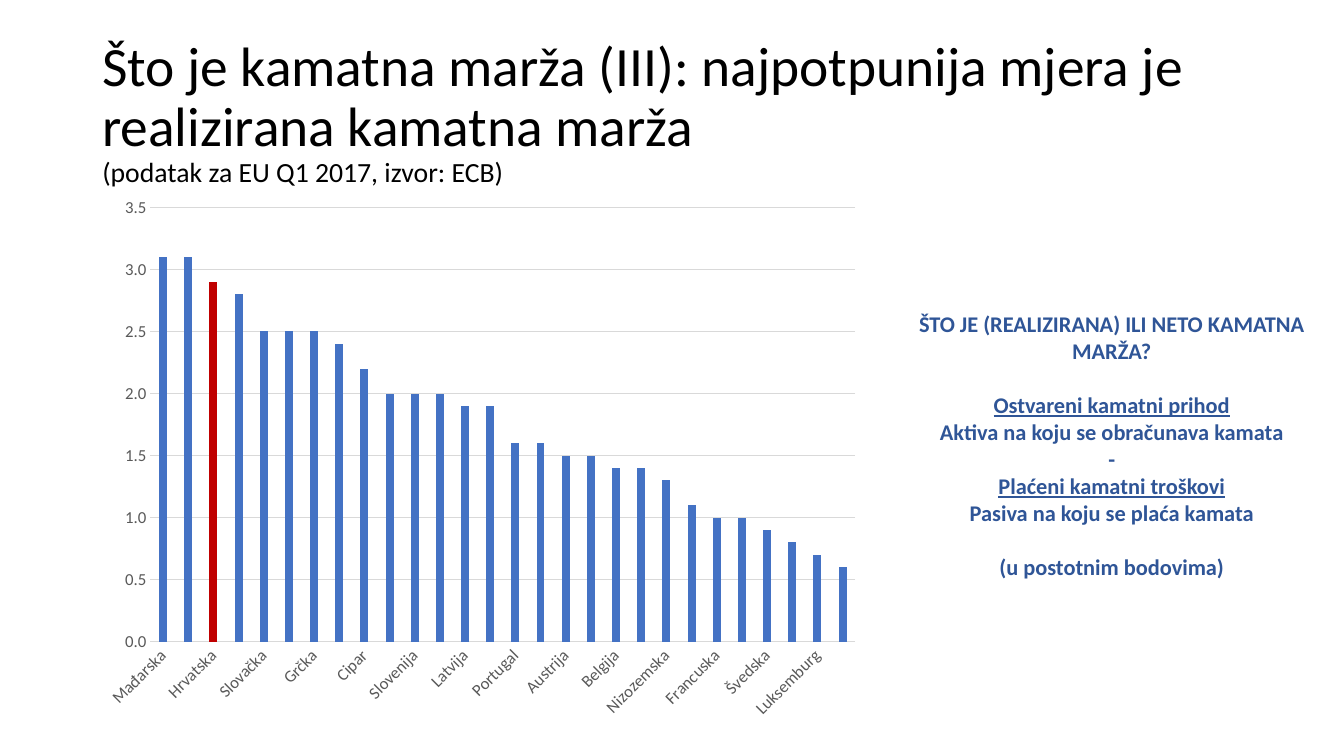
"""Build a slide on realised interest margins in the EU."""
from dataclasses import dataclass

import pptx
import pptx.chart.data
import pptx.dml.color
import pptx.enum.chart
import pptx.enum.text
import pptx.util

Pt = pptx.util.Pt
FONT = "Calibri"
COLORS = {
    "title": "000000",
    "definition": "2F5597",
    "bar": "4472C4",
    "highlight": "C00000",
    "axis_text": "595959",
    "grid": "D9D9D9",
}
HIGHLIGHTED = "Hrvatska"
MARGINS = {
    "Mađarska": 3.1, "Bugarska": 3.1, "Hrvatska": 2.9, "Rumunjska": 2.8,
    "Slovačka": 2.5, "Poljska": 2.5, "Grčka": 2.5, "Češka": 2.4,
    "Cipar": 2.2, "Estonija": 2.0, "Slovenija": 2.0, "Španjolska": 2.0,
    "Latvija": 1.9, "Malta": 1.9, "Portugal": 1.6, "Litva": 1.6,
    "Austrija": 1.5, "Irska": 1.5, "Belgija": 1.4, "Italija": 1.4,
    "Nizozemska": 1.3, "Njemačka": 1.1, "Francuska": 1.0, "Danska": 1.0,
    "Švedska": 0.9, "U.K.": 0.8, "Luksemburg": 0.7, "Finska": 0.6,
}


@dataclass(frozen=True)
class Box:
    left: float
    top: float
    width: float
    height: float

    def lengths(self) -> tuple:
        return Pt(self.left), Pt(self.top), Pt(self.width), Pt(self.height)


@dataclass(frozen=True)
class Line:
    text: str
    underline: bool = False
    space_before: float = 0


TITLE_BOX = Box(66, 28.8, 828, 104.4)
CHART_BOX = Box(66, 133.2, 556, 388)
DEFINITION_BOX = Box(648.7, 218.2, 290.9, 278.6)
LINE_GAP = 19.5
TITLE_LINES = (
    ("Što je kamatna marža (III): najpotpunija mjera je realizirana kamatna marža", 39.6),
    ("(podatak za EU Q1 2017, izvor: ECB)", 19.8),
)
DEFINITION_LINES = (
    Line("ŠTO JE (REALIZIRANA) ILI NETO KAMATNA MARŽA?"),
    Line("Ostvareni kamatni prihod", underline=True, space_before=LINE_GAP),
    Line("Aktiva na koju se obračunava kamata"),
    Line("-"),
    Line("Plaćeni kamatni troškovi", underline=True),
    Line("Pasiva na koju se plaća kamata"),
    Line("(u postotnim bodovima)", space_before=LINE_GAP),
)


def color(name: str) -> pptx.dml.color.RGBColor:
    return pptx.dml.color.RGBColor.from_string(COLORS[name])


def style_font(font, size: float, color_name: str, bold: bool = False) -> None:
    font.name = FONT
    font.size = Pt(size)
    font.bold = bold
    font.color.rgb = color(color_name)


def add_text_frame(slide, box: Box):
    text_frame = slide.shapes.add_textbox(*box.lengths()).text_frame
    text_frame.word_wrap = True
    return text_frame


def add_title(slide) -> None:
    text_frame = add_text_frame(slide, TITLE_BOX)
    text_frame.vertical_anchor = pptx.enum.text.MSO_ANCHOR.MIDDLE
    for index, (text, size) in enumerate(TITLE_LINES):
        paragraph = text_frame.add_paragraph() if index else text_frame.paragraphs[0]
        paragraph.text = text
        paragraph.line_spacing = 0.9
        style_font(paragraph.font, size, "title")


def add_definition(slide) -> None:
    text_frame = add_text_frame(slide, DEFINITION_BOX)
    for index, line in enumerate(DEFINITION_LINES):
        paragraph = text_frame.add_paragraph() if index else text_frame.paragraphs[0]
        paragraph.text = line.text
        paragraph.alignment = pptx.enum.text.PP_ALIGN.CENTER
        paragraph.space_before = Pt(line.space_before)
        style_font(paragraph.font, 16, "definition", bold=True)
        paragraph.font.underline = line.underline


def style_axis(axis) -> None:
    axis.major_tick_mark = pptx.enum.chart.XL_TICK_MARK.NONE
    axis.minor_tick_mark = pptx.enum.chart.XL_TICK_MARK.NONE
    style_font(axis.tick_labels.font, 12, "axis_text")


def style_line(line) -> None:
    line.color.rgb = color("grid")
    line.width = Pt(0.75)


def add_margin_chart(slide) -> None:
    chart_data = pptx.chart.data.CategoryChartData(number_format="0.0")
    chart_data.categories = list(MARGINS)
    chart_data.add_series("Series 1", list(MARGINS.values()))
    chart = slide.shapes.add_chart(
        pptx.enum.chart.XL_CHART_TYPE.COLUMN_CLUSTERED, *CHART_BOX.lengths(), chart_data
    ).chart
    chart.has_legend = False
    chart.has_title = False
    style_font(chart.font, 10, "title")

    plot = chart.plots[0]
    plot.vary_by_categories = False
    plot.gap_width = 219
    plot.overlap = -27
    series = plot.series[0]
    series.format.fill.solid()
    series.format.fill.fore_color.rgb = color("bar")
    highlight = series.points[list(MARGINS).index(HIGHLIGHTED)].format.fill
    highlight.solid()
    highlight.fore_color.rgb = color("highlight")

    style_axis(chart.category_axis)
    style_line(chart.category_axis.format.line)
    text_body = chart.category_axis.tick_labels.font._element.getparent().getparent().getparent()
    text_body.bodyPr.set("rot", "-2700000")

    value_axis = chart.value_axis
    style_axis(value_axis)
    value_axis.minimum_scale = 0
    value_axis.maximum_scale = 3.5
    value_axis.major_unit = 0.5
    value_axis.tick_labels.number_format = "#,##0.0"
    value_axis.tick_labels.number_format_is_linked = False
    value_axis.format.line.fill.background()
    value_axis.has_major_gridlines = True
    style_line(value_axis.major_gridlines.format.line)


def main() -> None:
    presentation = pptx.Presentation()
    presentation.slide_width = Pt(960)
    presentation.slide_height = Pt(540)
    slide = presentation.slides.add_slide(presentation.slide_layouts[6])
    add_title(slide)
    add_definition(slide)
    add_margin_chart(slide)
    presentation.save("out.pptx")


if __name__ == "__main__":
    main()
